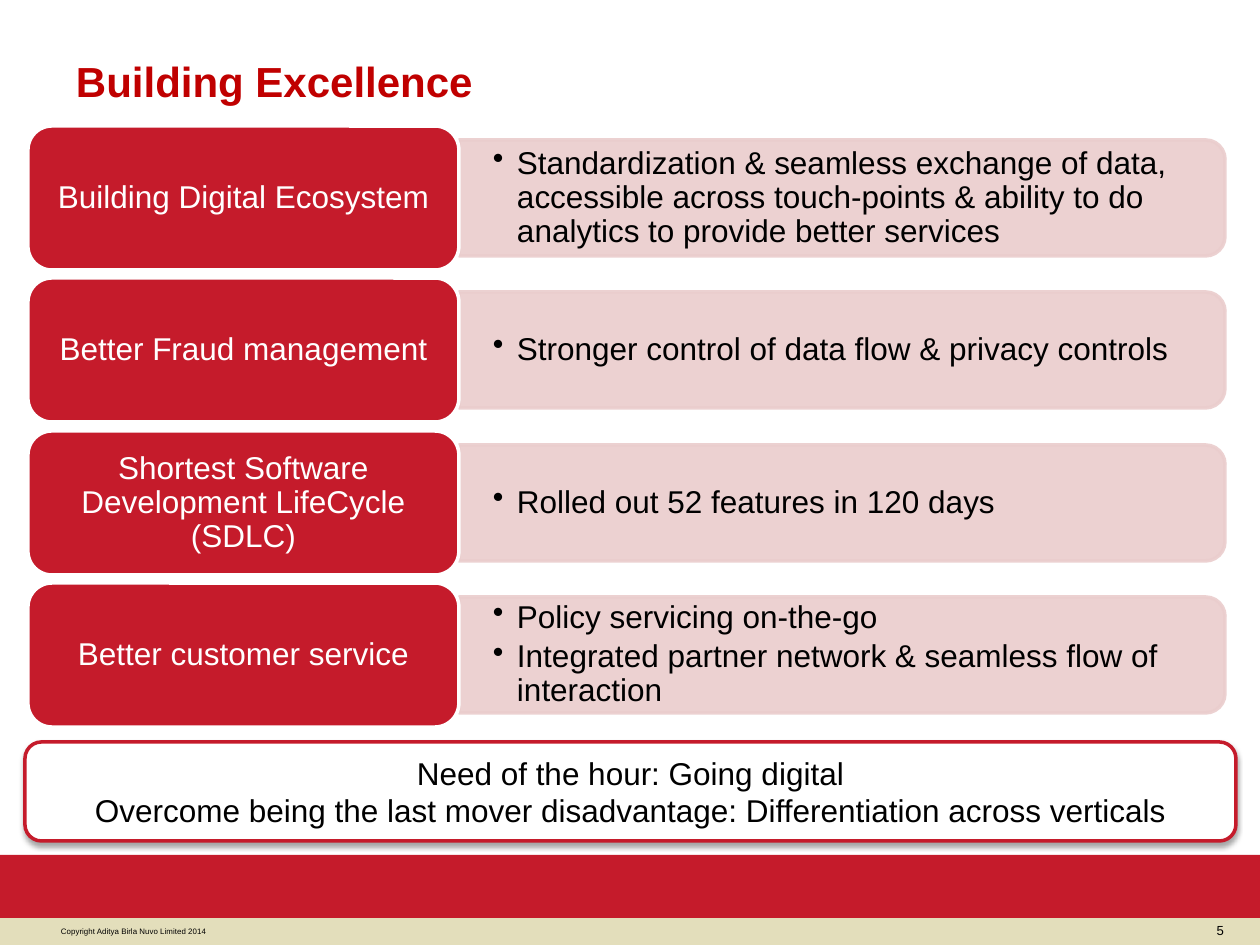
from pptx import Presentation
from pptx.dml.color import RGBColor as Rgb
from pptx.enum.shapes import MSO_SHAPE as Preset
from pptx.enum.text import MSO_ANCHOR as Anchor, PP_ALIGN as Align
from pptx.oxml.ns import qn
from pptx.util import Emu, Pt
from lxml.etree import SubElement

PX = 914400 / 126
COLORS = {
    "red": "C51B2B",
    "title": "C00000",
    "pink": "EACDCD",
    "sand": "E3DEBB",
    "white": "FFFFFF",
    "black": "000000",
}
ROWS = [
    ("Building Digital Ecosystem", [
        "Standardization & seamless exchange of data, accessible across "
        "touch-points & ability to do analytics to provide better services"]),
    ("Better Fraud management", ["Stronger control of data flow & privacy controls"]),
    ("Shortest Software Development LifeCycle (SDLC)", ["Rolled out 52 features in 120 days"]),
    ("Better customer service", [
        "Policy servicing on-the-go",
        "Integrated partner network & seamless flow of interaction"]),
]
MESSAGE = [
    "Need of the hour: Going digital",
    "Overcome being the last mover disadvantage: Differentiation across verticals",
]


def px(value):
    """Turn pixels into EMU."""
    return Emu(round(value * PX))


def rgb(name):
    """Look up a named colour."""
    return Rgb.from_string(COLORS[name])


def add_block(page, preset, box, fill, line=None):
    """Add a flat preset shape."""
    shape = page.shapes.add_shape(preset, *map(px, box))
    shape.shadow.inherit = False
    shape.fill.solid()
    shape.fill.fore_color.rgb = rgb(fill)
    if line:
        shape.line.color.rgb = rgb(line)
        shape.line.width = Pt(2)
    else:
        shape.line.fill.background()
    return shape


def add_text_box(page, box):
    """Add an empty text box."""
    return page.shapes.add_textbox(*map(px, box))


def add_bullet(para):
    """Give a paragraph a hanging round bullet."""
    props = para._p.get_or_add_pPr()
    props.set("marL", str(px(24)))
    props.set("indent", str(px(-24)))
    SubElement(props, qn("a:buChar"), char="•")


def write(shape, lines, size, color, align=Align.LEFT, anchor=Anchor.MIDDLE,
          inset=(13, 6), bold=False, spacing=None, bullet=False):
    """Fill a shape with one paragraph for each line."""
    frame = shape.text_frame
    frame.word_wrap = True
    frame.vertical_anchor = anchor
    frame.margin_left = frame.margin_right = px(inset[0])
    frame.margin_top = frame.margin_bottom = px(inset[1])
    for index, line in enumerate(lines):
        para = frame.add_paragraph() if index else frame.paragraphs[0]
        para.alignment = align
        if spacing:
            para.line_spacing = spacing
        if bullet:
            para.space_after = Pt(3)
            add_bullet(para)
        span = para.add_run()
        span.text = line
        span.font.name = "Arial"
        span.font.size = Pt(size)
        span.font.bold = bold
        span.font.color.rgb = rgb(color)


def add_panel(page, box):
    """Add a translucent panel rounded on its right side."""
    left, top, width, height = box
    turned = (left + (width - height) / 2, top + (height - width) / 2, height, width)
    panel = add_block(page, Preset.ROUND_2_SAME_RECTANGLE, turned, "pink", "pink")
    panel.rotation = 90
    for color in panel._element.spPr.iter(qn("a:srgbClr")):
        SubElement(color, qn("a:alpha"), val="90000")


def add_row(page, box, label, points):
    """Add a label with its panel of bullet points."""
    left, top, width, height = box
    label_width = 431
    panel_box = (left + label_width, top + 14, width - label_width, height - 28)
    add_panel(page, panel_box)
    text_box = add_text_box(page, (panel_box[0], top + 20, panel_box[2] - 6, height - 40))
    write(text_box, points, 18, "black", inset=(34, 18), spacing=0.9, bullet=True)
    tile = add_block(page, Preset.ROUNDED_RECTANGLE,
                     (left, top, label_width, height), "red", "white")
    write(tile, [label], 18, "white", Align.CENTER, inset=(9, 5), spacing=0.9)


def add_message(page, box):
    """Add the outlined closing message with a soft shadow."""
    banner = add_block(page, Preset.ROUNDED_RECTANGLE, box, "white", "red")
    effects = banner._element.spPr.find(qn("a:effectLst"))
    shadow = SubElement(effects, qn("a:outerShdw"), blurRad=str(Pt(3)),
                        dist=str(Pt(1.8)), dir="5400000", rotWithShape="0")
    color = SubElement(shadow, qn("a:srgbClr"), val=COLORS["black"])
    SubElement(color, qn("a:alpha"), val="35000")
    write(banner, MESSAGE, 18, "black", Align.CENTER, inset=(6, 6))


def add_footer(page, box):
    """Add the two footer bands, copyright line and page number."""
    left, top, width, height = box
    band = 63
    strip = add_block(page, Preset.RECTANGLE,
                      (left, top + band, width, height - band), "sand")
    write(strip, ["Copyright Aditya Birla Nuvo Limited 2014"], 4.5, "black", inset=(61, 0))
    add_block(page, Preset.RECTANGLE, (left, top, width, band), "red")
    number = add_text_box(page, (left + 944, top + band - 2, 293, height - band + 1))
    write(number, ["5"], 7.5, "black", Align.RIGHT, Anchor.TOP)


def main():
    """Build and save the slide."""
    deck = Presentation()
    deck.slide_width, deck.slide_height = px(1260), px(945)
    page = deck.slides.add_slide(deck.slide_layouts[6])
    add_footer(page, (0, 855, 1260, 90))
    title = add_text_box(page, (63, 22, 977, 117))
    write(title, ["Building Excellence"], 24, "title", bold=True)
    for index, (label, points) in enumerate(ROWS):
        add_row(page, (28, 126 + index * 305 // 2, 1197, 144), label, points)
    add_message(page, (25, 742, 1211, 99))
    deck.save("out.pptx")


if __name__ == "__main__":
    main()
